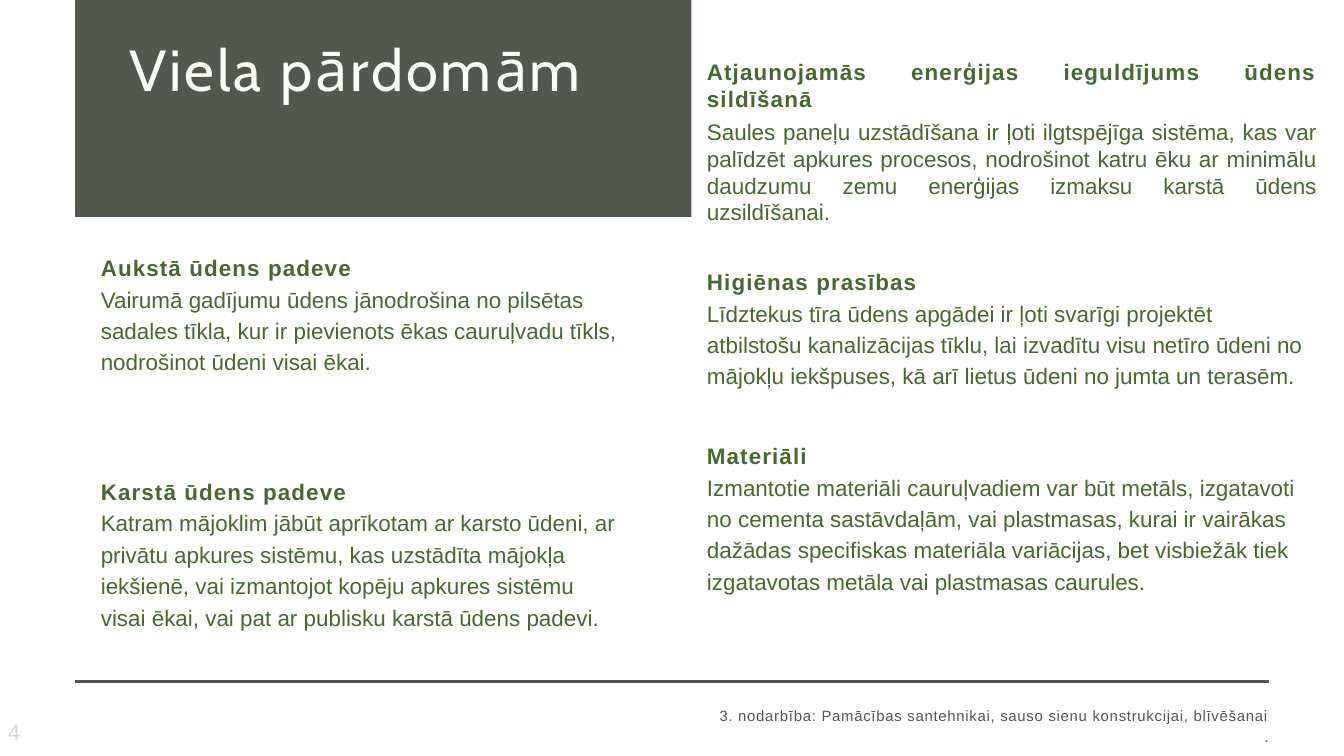
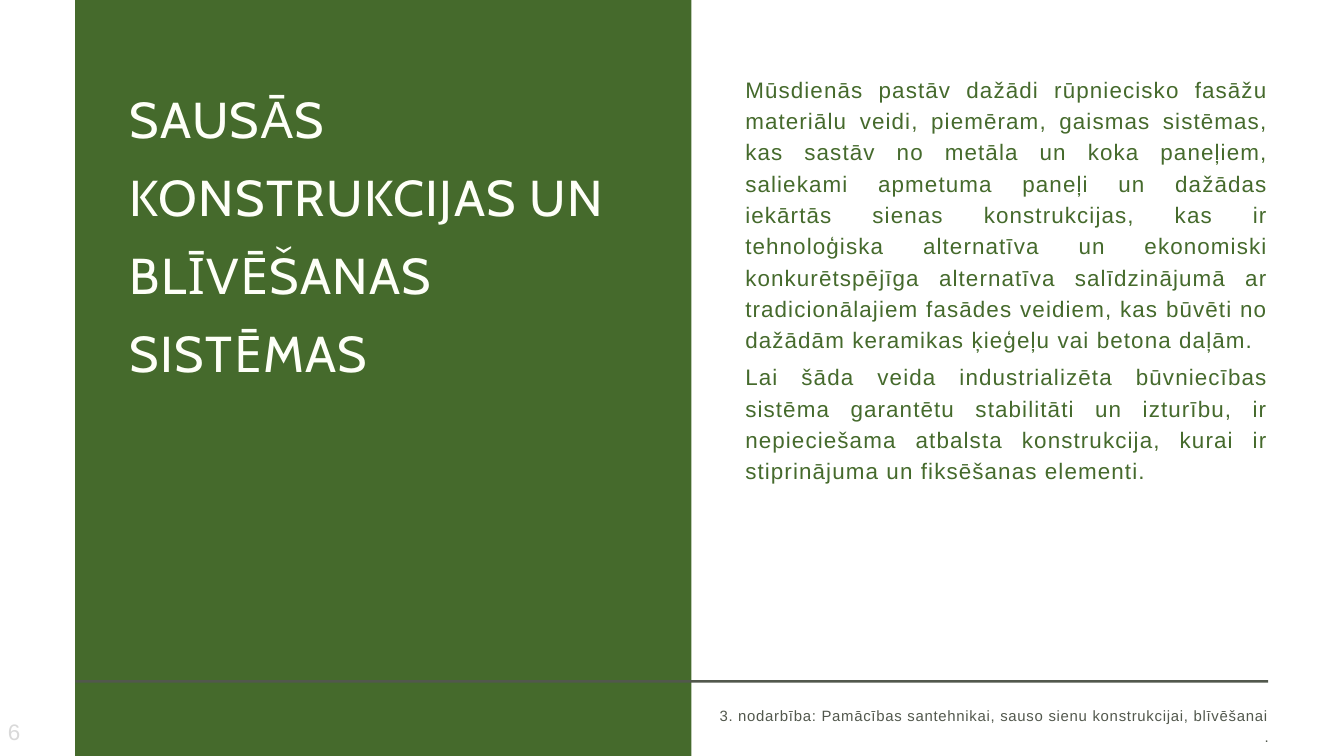
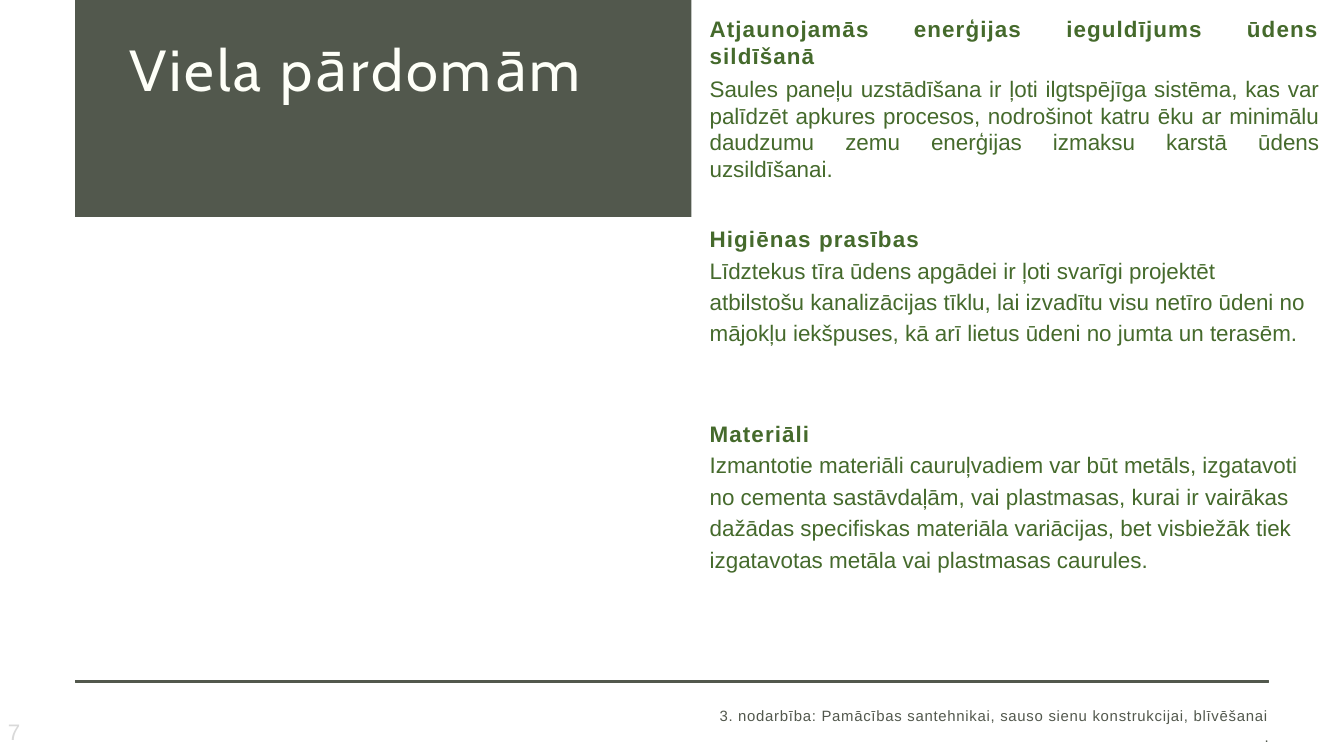
from pptx import Presentation
from pptx.dml.color import RGBColor
from pptx.enum.shapes import MSO_SHAPE
from pptx.enum.text import MSO_ANCHOR, PP_ALIGN
from pptx.util import Inches, Pt

# Grid: 20 columns by 11.25 rows of square cells
SLIDE_WIDTH, SLIDE_HEIGHT = Inches(20), Inches(11.25)
CELL = SLIDE_WIDTH // 20

GREEN = RGBColor(0x45, 0x6A, 0x2C)
SLATE = RGBColor(0x52, 0x58, 0x4D)
IVORY = RGBColor(0xFE, 0xFF, 0xF8)
PALE_GREY = RGBColor(0xD9, 0xD9, 0xD9)

BODY_FONT, TITLE_FONT = "Arial", "Cabin"
BODY_SIZE, BODY_LEADING, TITLE_LEADING = 24, 33.6, 83.7
HEADING_TRACKING = 1.2

# Columns shared by the slides
PANEL_LEFT, PANEL_WIDTH = 1.12, 9.17
TITLE_LEFT, TITLE_WIDTH = 1.93, 7.56
TOPIC_LEFT, TOPIC_WIDTH = 1.5, 7.78

LESSON = "3. nodarbība: Pamācības santehnikai, sauso sienu konstrukcijai, blīvēšanai"

COLD_WATER = (
    "Aukstā ūdens padeve",
    "Vairumā gadījumu ūdens jānodrošina no pilsētas sadales tīkla, kur ir "
    "pievienots ēkas cauruļvadu tīkls, nodrošinot ūdeni visai ēkai.",
)
HOT_WATER = (
    "Karstā ūdens padeve",
    "Katram mājoklim jābūt aprīkotam ar karsto ūdeni, ar privātu apkures "
    "sistēmu, kas uzstādīta mājokļa iekšienē, vai izmantojot kopēju apkures "
    "sistēmu visai ēkai, vai pat ar publisku karstā ūdens padevi.",
)
RENEWABLES = (
    "Atjaunojamās enerģijas ieguldījums ūdens sildīšanā",
    "Saules paneļu uzstādīšana ir ļoti ilgtspējīga sistēma, kas var palīdzēt "
    "apkures procesos, nodrošinot katru ēku ar minimālu daudzumu zemu "
    "enerģijas izmaksu karstā ūdens uzsildīšanai.",
)
HYGIENE = (
    "Higiēnas prasības",
    "Līdztekus tīra ūdens apgādei ir ļoti svarīgi projektēt atbilstošu "
    "kanalizācijas tīklu, lai izvadītu visu netīro ūdeni no mājokļu iekšpuses, "
    "kā arī lietus ūdeni no jumta un terasēm.",
)
MATERIALS = (
    "Materiāli",
    "Izmantotie materiāli cauruļvadiem var būt metāls, izgatavoti no cementa "
    "sastāvdaļām, vai plastmasas, kurai ir vairākas dažādas specifiskas "
    "materiāla variācijas, bet visbiežāk tiek izgatavotas metāla vai "
    "plastmasas caurules.",
)
DRY_SYSTEMS = (
    "Mūsdienās pastāv dažādi rūpniecisko fasāžu materiālu veidi, piemēram, "
    "gaismas sistēmas, kas sastāv no metāla un koka paneļiem, saliekami "
    "apmetuma paneļi un dažādas iekārtās sienas konstrukcijas, kas ir "
    "tehnoloģiska alternatīva un ekonomiski konkurētspējīga alternatīva "
    "salīdzinājumā ar tradicionālajiem fasādes veidiem, kas būvēti no dažādām "
    "keramikas ķieģeļu vai betona daļām.",
    "Lai šāda veida industrializēta būvniecības sistēma garantētu stabilitāti "
    "un izturību, ir nepieciešama atbalsta konstrukcija, kurai ir "
    "stiprinājuma un fiksēšanas elementi.",
)


def on_grid(*cells):
    return [round(cell * CELL) for cell in cells]


def add_block(slide, area, color, outlined=False):
    block = slide.shapes.add_shape(MSO_SHAPE.RECTANGLE, *on_grid(*area))
    block.shadow.inherit = False
    block.fill.solid()
    block.fill.fore_color.rgb = color
    if outlined:
        block.line.color.rgb = color
        block.line.width = Pt(0.75)
    else:
        block.line.fill.background()
    return block


def add_text_area(slide, area):
    return slide.shapes.add_textbox(*on_grid(*area))


def write(holder, texts, color=GREEN, size=BODY_SIZE, font=BODY_FONT, tracking=0,
          leading=None, after=0, align=PP_ALIGN.LEFT):
    """Fill a shape or text box with paragraphs of one style."""
    frame = holder.text_frame
    frame.word_wrap = True
    frame.vertical_anchor = MSO_ANCHOR.TOP
    frame.margin_left = frame.margin_right = frame.margin_top = frame.margin_bottom = 0
    frame.text = "\n".join(texts)
    for paragraph in frame.paragraphs:
        paragraph.alignment = align
        paragraph.space_after = Pt(after)
        if leading:
            paragraph.line_spacing = Pt(leading)
        for run in paragraph.runs:
            run.font.name, run.font.size = font, Pt(size)
            run.font.color.rgb = color
            track(run, tracking)
    return frame


def track(run, points):
    run.font._element.set("spc", str(round(points * 100)))


def add_topic(slide, topic, area, lead_lines=0, **style):
    """Bold heading over its explanation, pushed down by lead_lines."""
    frame = write(add_text_area(slide, area), topic, **style)
    frame.margin_top = Pt(lead_lines * BODY_LEADING)
    heading = frame.paragraphs[0].runs[0]
    heading.font.bold = True
    track(heading, HEADING_TRACKING)


def add_right_topics(slide, left, tops):
    renewables_top, hygiene_top, materials_top = tops
    add_topic(slide, RENEWABLES, (left, renewables_top, 9.07, 2.51),
              after=6, align=PP_ALIGN.JUSTIFY)
    add_topic(slide, HYGIENE, (left, hygiene_top, 8.89, 2.34),
              lead_lines=1, leading=BODY_LEADING)
    add_topic(slide, MATERIALS, (left, materials_top, 8.85, 2.82),
              lead_lines=1, leading=BODY_LEADING)


def add_title(holder, title, size, tracking):
    write(holder, [title], IVORY, size, TITLE_FONT, tracking, TITLE_LEADING)


def add_reflection_title(slide):
    add_block(slide, (PANEL_LEFT, -0.34, PANEL_WIDTH, 3.57), SLATE)
    title_block = add_block(slide, (TITLE_LEFT, 0.37, TITLE_WIDTH, 2.32), SLATE)
    add_title(title_block, "Viela pārdomām", 62, 3.1)


def add_footer(slide, number, outlined=True):
    add_block(slide, (PANEL_LEFT, 10.12, 17.75, 0.04), SLATE, outlined)
    write(add_text_area(slide, (10.56, 10.47, 8.32, 0.9)), [LESSON, "."], SLATE, 16,
          tracking=0.8, leading=22.4, align=PP_ALIGN.RIGHT)
    page = write(add_text_area(slide, (0.02, 10.69, 2.33, 0.4)), [str(number)], PALE_GREY,
                 tracking=HEADING_TRACKING)
    page.margin_left = Inches(0.1)
    page.vertical_anchor = MSO_ANCHOR.MIDDLE


def build_water_reflection(slide):
    add_reflection_title(slide)
    add_right_topics(slide, 10.52, [0.87 + 2.59 * row for row in range(3)])
    for topic, top, height in ((COLD_WATER, 3.72, 1.86), (HOT_WATER, 7.05, 2.34)):
        add_topic(slide, topic, (TOPIC_LEFT, top, TOPIC_WIDTH, height), leading=BODY_LEADING)
    add_footer(slide, 4)


def build_dry_systems(slide):
    add_block(slide, (PANEL_LEFT, -0.37, PANEL_WIDTH, 11.98), GREEN)
    add_title(add_text_area(slide, (TITLE_LEFT, 1.05, TITLE_WIDTH, 5.94)),
              "SAUSĀS KONSTRUKCIJAS UN BLĪVĒŠANAS SISTĒMAS", 54, 1.5)
    write(add_text_area(slide, (11.09, 1.06, TOPIC_WIDTH, 7.9)), DRY_SYSTEMS,
          tracking=HEADING_TRACKING, leading=BODY_LEADING, after=6, align=PP_ALIGN.JUSTIFY)
    add_footer(slide, 6, outlined=False)


def build_systems_reflection(slide):
    add_reflection_title(slide)
    add_right_topics(slide, 10.56, (0.23, 2.82, 5.72))
    add_footer(slide, 7)


def main():
    deck = Presentation()
    deck.slide_width, deck.slide_height = SLIDE_WIDTH, SLIDE_HEIGHT
    blank = deck.slide_layouts[6]
    for build in (build_water_reflection, build_dry_systems, build_systems_reflection):
        build(deck.slides.add_slide(blank))
    deck.save("out.pptx")


if __name__ == "__main__":
    main()
